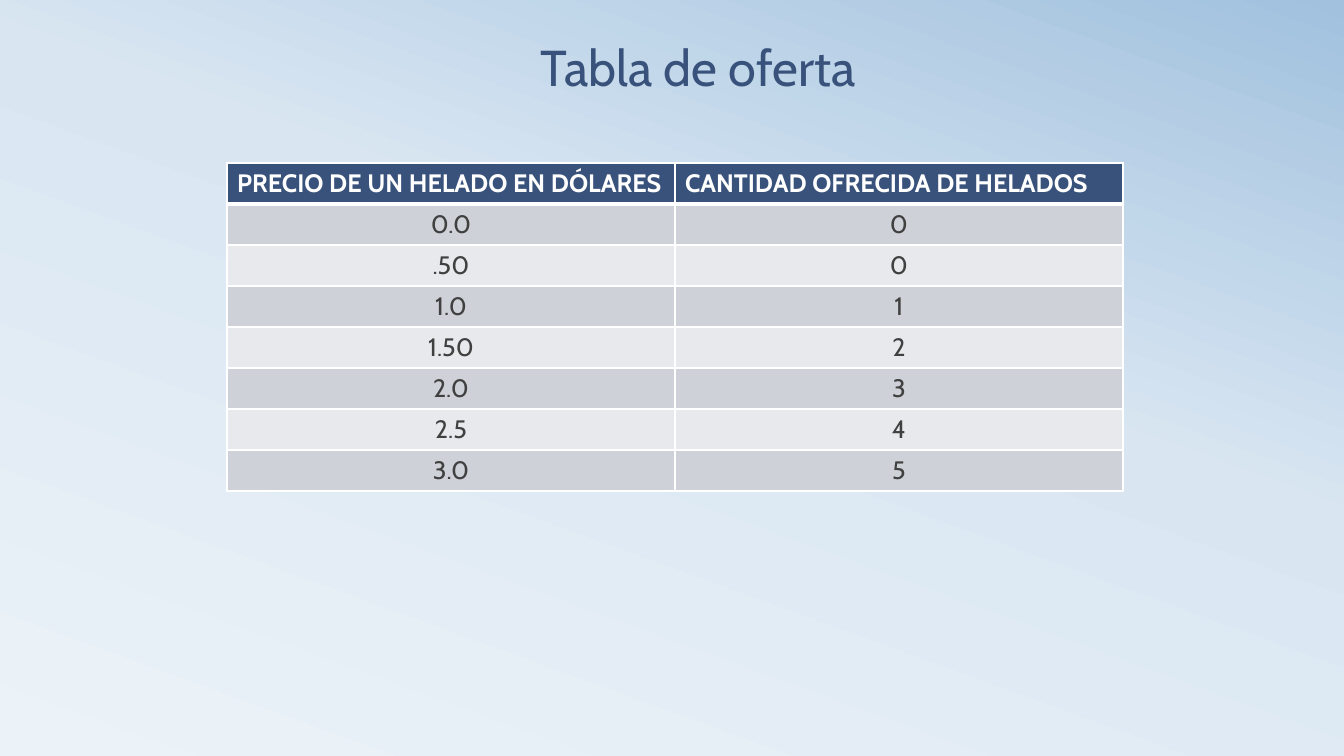
from copy import deepcopy

from lxml import etree
from pptx import Presentation
from pptx.dml.color import RGBColor
from pptx.enum import text
from pptx.oxml.ns import qn
from pptx.util import Pt

# Content
TITLE = "Tabla de oferta"
HEADERS = ("PRECIO DE UN HELADO EN DÓLARES", "CANTIDAD OFRECIDA DE HELADOS")
SUPPLY = [
    ("0.0", "0"),
    (".50", "0"),
    ("1.0", "1"),
    ("1.50", "2"),
    ("2.0", "3"),
    ("2.5", "4"),
    ("3.0", "5"),
]

# Style
FONT = "Cabin"
NAVY = RGBColor(0x39, 0x52, 0x7B)
WHITE = RGBColor(0xFF, 0xFF, 0xFF)
INK = RGBColor(0x40, 0x40, 0x40)
BANDS = (RGBColor(0xCE, 0xD1, 0xD7), RGBColor(0xE8, 0xE9, 0xEC))
SKY = [
    (0, RGBColor(0xEC, 0xF3, 0xF8)),
    (0.58, RGBColor(0xD9, 0xE6, 0xF2)),
    (1, RGBColor(0xA1, 0xC1, 0xDE)),
]

# Layout in px
SLIDE_W, SLIDE_H = 1344, 756
TITLE_BOX = (93, 29, 1210, 72)
TABLE_X, TABLE_Y = 227, 163
COL_W, ROW_H = 448, 41
SCALE = 12192000 / SLIDE_W


def px(n):
    return round(n * SCALE)


def style(p, size, color, bold=False):
    font = p.runs[0].font
    font.name, font.size, font.bold = FONT, Pt(size), bold
    font.color.rgb = color


def add_borders(cell, bottom):
    tc_pr = cell._tc.get_or_add_tcPr()
    widths = {"a:lnL": 1, "a:lnR": 1, "a:lnT": 1, "a:lnB": bottom}
    for i, (side, width) in enumerate(widths.items()):
        ln = etree.Element(qn(side), w=str(Pt(width)))
        fill = etree.SubElement(ln, qn("a:solidFill"))
        etree.SubElement(fill, qn("a:srgbClr"), val=str(WHITE))
        tc_pr.insert(i, ln)


prs = Presentation()
prs.slide_width, prs.slide_height = px(SLIDE_W), px(SLIDE_H)
slide = prs.slides.add_slide(prs.slide_layouts[6])

# Background gradient
fill = slide.background.fill
fill.gradient()
fill.gradient_angle = 70
stops = slide.element.find(".//" + qn("a:gsLst"))
stops.append(deepcopy(stops[-1]))
for stop, (position, color) in zip(fill.gradient_stops, SKY):
    stop.position = position
    stop.color.rgb = color

# Title
tf = slide.shapes.add_textbox(*map(px, TITLE_BOX)).text_frame
tf.word_wrap = True
tf.vertical_anchor = text.MSO_ANCHOR.BOTTOM
p = tf.paragraphs[0]
p.text = TITLE
p.alignment = text.PP_ALIGN.CENTER
p.line_spacing = 0.8
style(p, 36, NAVY)

# Supply table
rows = [HEADERS, *SUPPLY]
table = slide.shapes.add_table(
    len(rows), len(HEADERS), px(TABLE_X), px(TABLE_Y),
    px(COL_W * len(HEADERS)), px(ROW_H * len(rows))).table
for column in table.columns:
    column.width = px(COL_W)
for i, values in enumerate(rows):
    header = i == 0
    table.rows[i].height = px(ROW_H)
    for j, value in enumerate(values):
        cell = table.cell(i, j)
        cell.fill.solid()
        cell.fill.fore_color.rgb = NAVY if header else BANDS[(i - 1) % 2]
        add_borders(cell, bottom=3 if header else 1)
        p = cell.text_frame.paragraphs[0]
        p.text = value
        p.alignment = text.PP_ALIGN.LEFT if header else text.PP_ALIGN.CENTER
        style(p, 18, WHITE if header else INK, bold=header)

prs.save("out.pptx")
